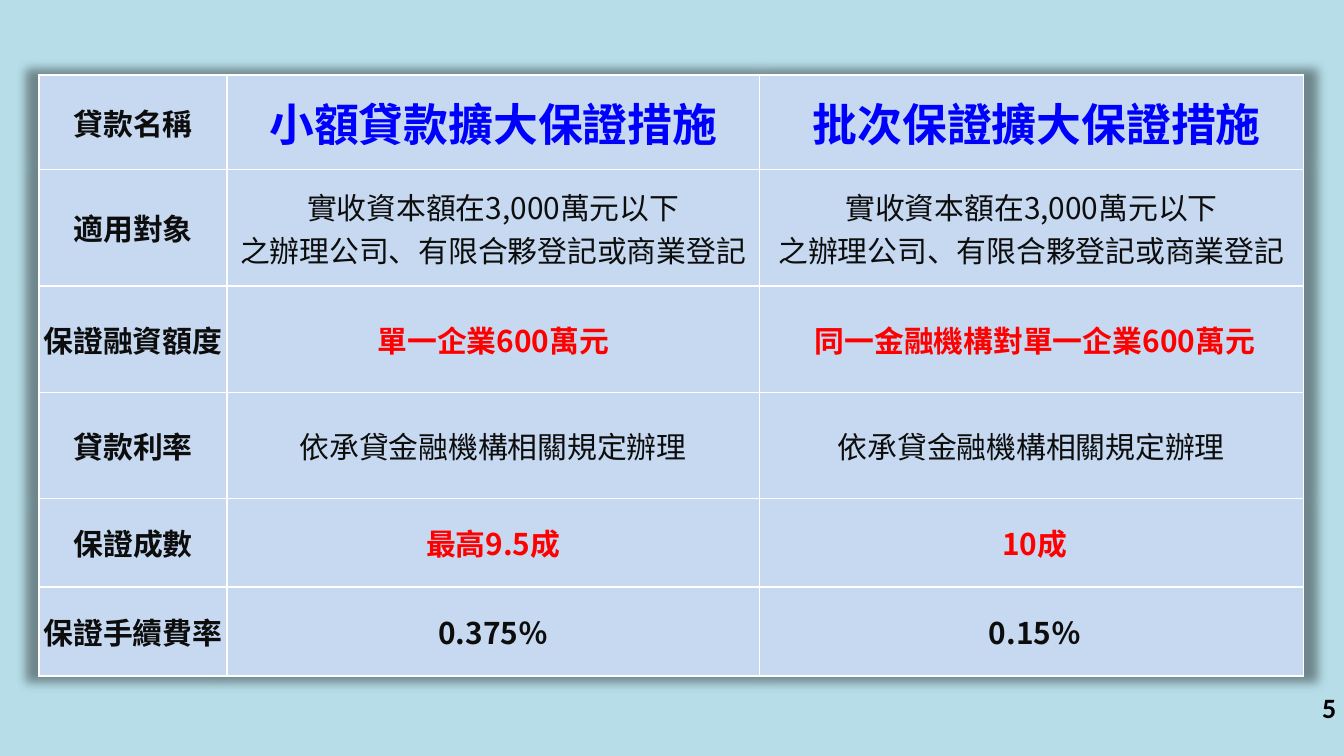
from lxml import etree
from pptx import Presentation, util as u
from pptx.dml.color import RGBColor
from pptx.enum import text
from pptx.oxml import ns

FONT = "Noto Sans CJK SC"
DARK, BLUE, RED = "0D0D0D", "0000FF", "FF0000"
APPLICANT = "實收資本額在3,000萬元以下\n之辦理公司、有限合夥登記或商業登記"
RATE = "依承貸金融機構相關規定辦理"
COLUMNS = [1.4, 3.96, 4.05]
ROWS = [
    (0.7, ("貸款名稱", "小額貸款擴大保證措施", " 批次保證擴大保證措施"), (24, BLUE, True)),
    (0.87, ("適用對象", APPLICANT, APPLICANT), (16, DARK, False)),
    (0.79, ("保證融資額度", "單一企業600萬元", " 同一金融機構對單一企業600萬元"), (16, RED, True)),
    (0.79, ("貸款利率", RATE, RATE), (16, DARK, False)),
    (0.66, ("保證成數", "最高9.5成", " 10成"), (16, RED, True)),
    (0.66, ("保證手續費率", "0.375％", " 0.15％"), (16, DARK, True)),
]


def rgb(value):
    return RGBColor.from_string(value)


def add_xml(parent, tag, **attrs):
    return etree.SubElement(parent, ns.qn(tag), attrs)


class SlideBuilder:
    """Holds the table style and the slide being built."""

    fill, border, header = "C6D9F1", "FFFFFF", (16, DARK, True)

    def __init__(self, slide, background):
        self.s = slide
        bg = slide.background.fill
        bg.solid()
        bg.fore_color.rgb = rgb(background)

    def format_text(self, tf, align, size, color, bold, font=FONT):
        for p in tf.paragraphs:
            p.alignment = align
            for r in p.runs:
                r.font.size, r.font.bold, r.font.name = u.Pt(size), bold, font
                r.font.color.rgb = rgb(color)
                add_xml(r.font._element, "a:ea", typeface=font)

    def page_number(self, number, x, y, w, h):
        sp = self.s.shapes.add_textbox(*map(u.Inches, (x, y, w, h)))
        tf = sp.text_frame
        tf.word_wrap = True
        tf.vertical_anchor = text.MSO_ANCHOR.MIDDLE
        tf.text = number
        self.format_text(tf, text.PP_ALIGN.RIGHT, 15, "000000", True, "Calibri")

    def cell(self, cell, content, style):
        cell.margin_left = cell.margin_right = u.Inches(0.02)
        cell.margin_top = cell.margin_bottom = 0
        cell.vertical_anchor = text.MSO_ANCHOR.MIDDLE
        tf = cell.text_frame
        tf.text = content
        self.format_text(tf, text.PP_ALIGN.CENTER, *style)
        if len(tf.paragraphs) == 1:
            tf.paragraphs[0].space_after = u.Pt(22.5)
        props = cell._tc.get_or_add_tcPr()
        for side in "LRTB":
            line = add_xml(props, f"a:ln{side}", w=str(u.Pt(1)))
            add_xml(add_xml(line, "a:solidFill"), "a:srgbClr", val=self.border)
        cell.fill.solid()
        cell.fill.fore_color.rgb = rgb(self.fill)

    def shadow(self, table):
        props = table._tbl.tblPr
        effects = add_xml(props, "a:effectLst")
        shadow = add_xml(effects, "a:outerShdw", blurRad=str(u.Pt(5)), sx="102000",
                         sy="102000", algn="ctr", rotWithShape="0")
        color = add_xml(shadow, "a:srgbClr", val="000000")
        add_xml(color, "a:alpha", val="40000")
        props.append(props.find(ns.qn("a:tableStyleId")))

    def table(self, x, y, columns, rows):
        height = sum(row[0] for row in rows)
        frame = self.s.shapes.add_table(
            len(rows), len(columns), *map(u.Inches, (x, y, sum(columns), height)))
        table = frame.table
        table.first_row = table.horz_banding = False
        self.shadow(table)
        for column, width in zip(table.columns, columns):
            column.width = u.Inches(width)
        for row, (row_height, contents, style) in zip(table.rows, rows):
            row.height = u.Inches(row_height)
            styles = (self.header, style, style)
            for cell, content, cell_style in zip(row.cells, contents, styles):
                self.cell(cell, content, cell_style)


def main():
    prs = Presentation()
    prs.slide_width = u.Inches(10)
    prs.slide_height = prs.slide_width * 9 // 16
    builder = SlideBuilder(prs.slides.add_slide(prs.slide_layouts[6]), "B7DEE8")
    builder.page_number("5", 9.49, 5.11, 0.55, 0.3)
    builder.table(0.29, 0.56, COLUMNS, ROWS)
    prs.save("out.pptx")


if __name__ == "__main__":
    main()
